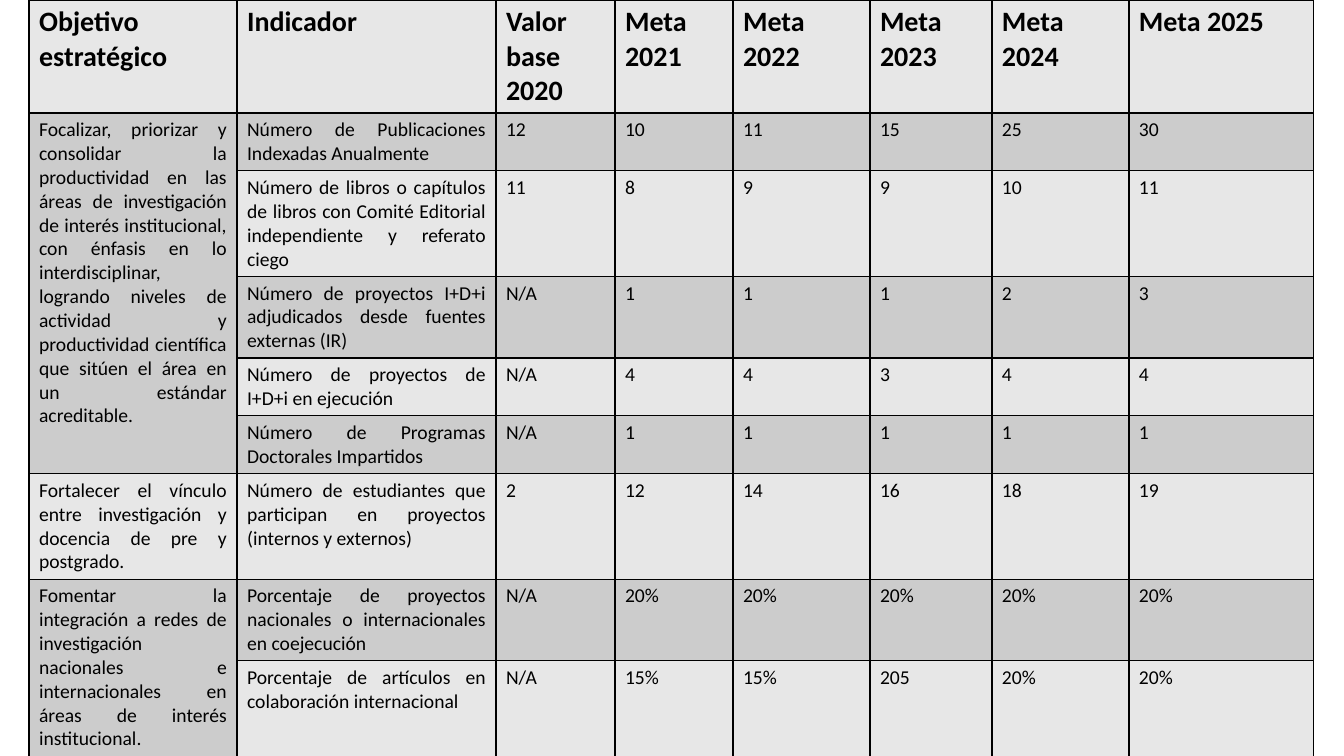
from lxml.etree import SubElement
from pptx import Presentation
from pptx.dml.color import RGBColor
from pptx.enum.text import PP_ALIGN
from pptx.oxml.ns import qn
from pptx.util import Emu, Pt

COLORS = {"text": "000000", "border": "000000", "light": "E7E7E7", "dark": "CCCCCC"}
FONT = "Calibri"
EMU_PER_PX = 914400 / 100.8
COLUMN_WIDTHS = [208, 259, 119, 118, 137, 122, 137, 185]
ROW_HEIGHTS = [109, 55, 102, 79, 55, 55, 102, 79, 92]

HEADINGS = ["Objetivo estratégico", "Indicador", "Valor base 2020",
            "Meta 2021", "Meta 2022", "Meta 2023", "Meta 2024", "Meta 2025"]
OBJECTIVES = [
    ("Focalizar, priorizar y consolidar la productividad en las áreas de investigación "
     "de interés institucional, con énfasis en lo interdisciplinar, logrando niveles de "
     "actividad y productividad científica que sitúen el área en un estándar acreditable.",
     [("Número de Publicaciones Indexadas Anualmente", "12 10 11 15 25 30"),
      ("Número de libros o capítulos de libros con Comité Editorial independiente y "
       "referato ciego", "11 8 9 9 10 11"),
      ("Número de proyectos I+D+i adjudicados desde fuentes externas (IR)",
       "N/A 1 1 1 2 3"),
      ("Número de proyectos de I+D+i en ejecución", "N/A 4 4 3 4 4"),
      ("Número de Programas Doctorales Impartidos", "N/A 1 1 1 1 1")]),
    ("Fortalecer el vínculo entre investigación y docencia de pre y postgrado.",
     [("Número de estudiantes que participan en proyectos (internos y externos)",
       "2 12 14 16 18 19")]),
    ("Fomentar la integración a redes de investigación nacionales e internacionales en "
     "áreas de interés institucional.",
     [("Porcentaje de proyectos nacionales o internacionales en coejecución",
       "N/A 20% 20% 20% 20% 20%"),
      ("Porcentaje de artículos en colaboración internacional",
       "N/A 15% 15% 205 20% 20%")]),
]


def px(length):
    """Turn pixels into EMU."""
    return Emu(round(length * EMU_PER_PX))


def style_cell(cell, fill):
    """Fill a cell and draw its four borders."""
    cell.fill.solid()
    cell.fill.fore_color.rgb = RGBColor.from_string(COLORS[fill])
    properties = cell._tc.get_or_add_tcPr()
    for position, side in enumerate(("a:lnL", "a:lnR", "a:lnT", "a:lnB")):
        border = SubElement(properties, qn(side), w=str(Pt(1)))
        color = SubElement(SubElement(border, qn("a:solidFill")), qn("a:srgbClr"))
        color.set("val", COLORS["border"])
        properties.insert(position, border)


def write_cell(cell, text, size=14, bold=False, align=PP_ALIGN.LEFT):
    """Write one run of text into a cell."""
    paragraph = cell.text_frame.paragraphs[0]
    paragraph.alignment = align
    run = paragraph.add_run()
    run.text = text
    run.font.name = FONT
    run.font.size = Pt(size)
    run.font.bold = bold
    run.font.color.rgb = RGBColor.from_string(COLORS["text"])


def add_goal_grid(slide, left, top):
    """Add the empty, shaded table of goals."""
    goals = slide.shapes.add_table(
        len(ROW_HEIGHTS), len(COLUMN_WIDTHS), px(left), px(top),
        px(sum(COLUMN_WIDTHS)), px(sum(ROW_HEIGHTS))).table
    for column, width in zip(goals.columns, COLUMN_WIDTHS):
        column.width = px(width)
    for index, (row, height) in enumerate(zip(goals.rows, ROW_HEIGHTS)):
        row.height = px(height)
        for cell in row.cells:
            style_cell(cell, "dark" if index % 2 else "light")
    return goals


def write_objective(goals, first_row, objective, indicators):
    """Write an objective beside its indicators and return the next free row."""
    next_row = first_row + len(indicators)
    objective_cell = goals.cell(first_row, 0)
    if len(indicators) > 1:
        objective_cell.merge(goals.cell(next_row - 1, 0))
    write_cell(objective_cell, objective, align=PP_ALIGN.JUSTIFY)
    for row, (indicator, targets) in enumerate(indicators, first_row):
        write_cell(goals.cell(row, 1), indicator, align=PP_ALIGN.JUSTIFY)
        for column, target in enumerate(targets.split(), 2):
            write_cell(goals.cell(row, column), target)
    return next_row


def main():
    """Build the slide of strategic goals and save it."""
    deck = Presentation()
    deck.slide_width, deck.slide_height = px(1344), px(756)
    slide = deck.slides.add_slide(deck.slide_layouts[6])
    goals = add_goal_grid(slide, 29, 0)
    for column, heading in enumerate(HEADINGS):
        write_cell(goals.cell(0, column), heading, size=20, bold=True)
    next_row = 1
    for objective, indicators in OBJECTIVES:
        next_row = write_objective(goals, next_row, objective, indicators)
    deck.save("out.pptx")


if __name__ == "__main__":
    main()
